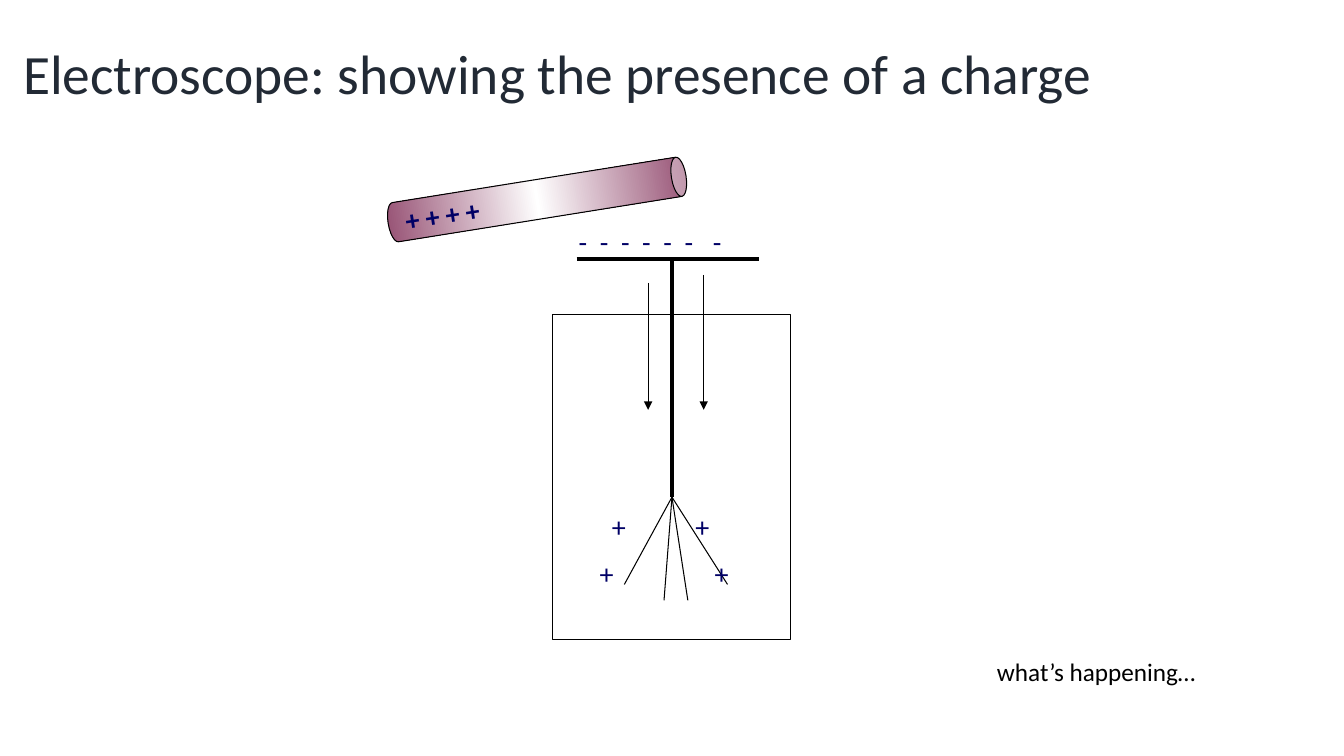
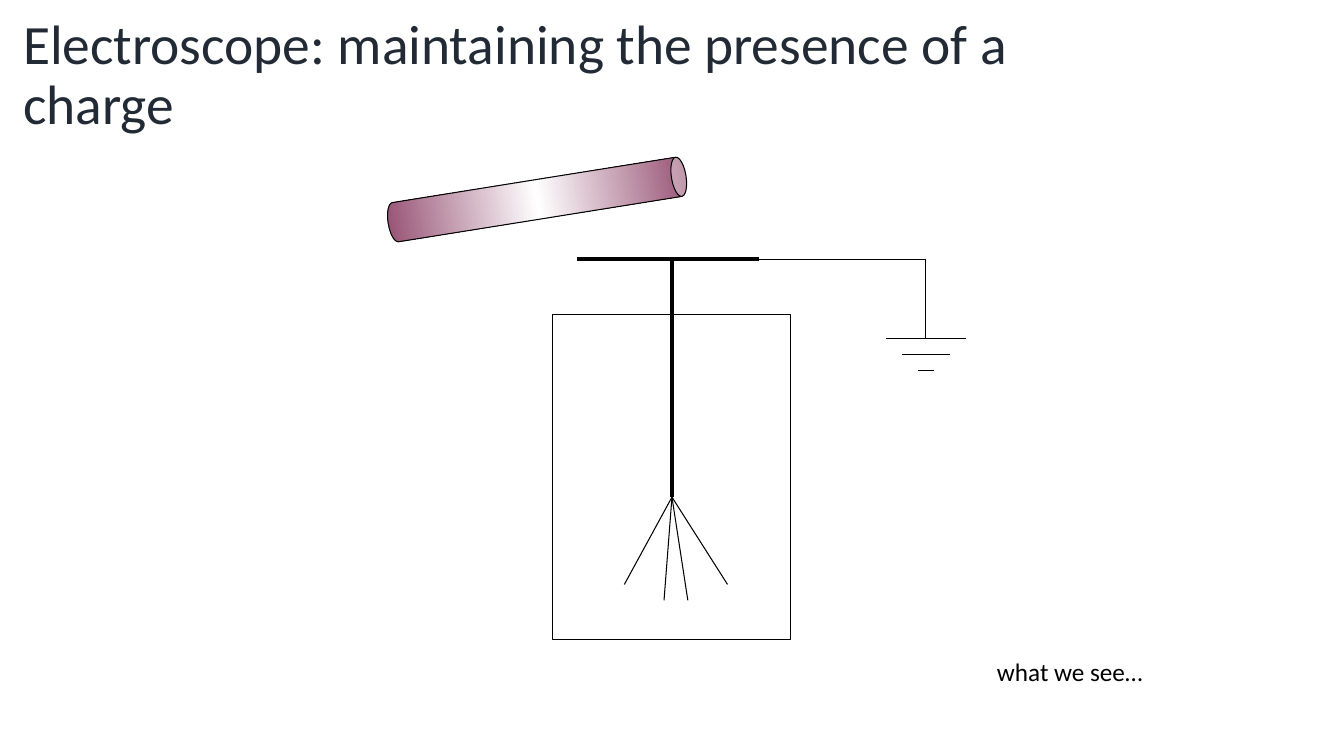
import lxml.etree
import pptx
import pptx.dml.color
import pptx.enum.shapes
import pptx.enum.text
import pptx.oxml.ns
import pptx.util

RGB = pptx.dml.color.RGBColor
BLACK = RGB(0x00, 0x00, 0x00)
WHITE = RGB(0xFF, 0xFF, 0xFF)
CHARGE_BLUE = RGB(0x00, 0x00, 0x66)
TITLE_SLATE = RGB(0x22, 0x2A, 0x35)
ROD_PLUM = RGB(0x95, 0x4F, 0x72)

FONT = "Calibri"
SLIDE_WIDTH = pptx.util.Inches(13.333)
SLIDE_HEIGHT = pptx.util.Inches(7.5)

# Drawing grid: square cells, counted from the middle of the electroscope's plate
CELL = pptx.util.Mm(2)
PLATE_X = SLIDE_WIDTH // 2
PLATE_Y = pptx.util.Inches(2.57)
JOINT = (0, 30)
LEAF_TIPS = [(-6, 11), (-1, 13), (2, 13), (7, 11)]
GROUND = (32, 10)

THIN, STEM, PLATE = 0.75, 2.25, 3


def span_of(cells):
    return round(cells * CELL)


def point(column, row):
    return PLATE_X + span_of(column), PLATE_Y + span_of(row)


def frame(column, row, columns, rows):
    return *point(column, row), span_of(columns), span_of(rows)


def add_child(parent, tag, **attributes):
    child = lxml.etree.SubElement(parent, pptx.oxml.ns.qn(tag))
    for name, value in attributes.items():
        child.set(name, str(value))
    return child


def add_line(page, start, end, width=THIN, arrow=False):
    line = page.shapes.add_connector(
        pptx.enum.shapes.MSO_CONNECTOR.STRAIGHT, *point(*start), *point(*end))
    line.line.color.rgb = BLACK
    line.line.width = pptx.util.Pt(width)
    if arrow:
        add_child(line.line._get_or_add_ln(), "a:tailEnd", type="triangle")
    add_child(line._element.spPr, "a:effectLst")
    return line


def add_outlined(page, kind, place):
    shape = page.shapes.add_shape(kind, *place)
    shape.shadow.inherit = False
    shape.line.color.rgb = BLACK
    shape.line.width = pptx.util.Pt(THIN)
    return shape


def write_span(para, text, size, color, bold=False):
    span = para.add_run()
    span.text = text
    span.font.name = FONT
    span.font.size = pptx.util.Pt(size)
    span.font.color.rgb = color
    span.font.bold = bold


def add_text(page, place, lines, size, color):
    box = page.shapes.add_textbox(*place)
    box.text_frame.word_wrap = True
    for index, text in enumerate(lines):
        para = box.text_frame.paragraphs[0] if index == 0 else box.text_frame.add_paragraph()
        if index:
            para.space_before = pptx.util.Pt(size / 2)
        write_span(para, text, size, color)
    return box


def set_tabs(para, stops):
    tabs = add_child(para._p.get_or_add_pPr(), "a:tabLst")
    for stop in stops:
        add_child(tabs, "a:tab", pos=pptx.util.Inches(stop), algn="l")


def add_title(page, text):
    box = add_text(page, frame(-83, -30.9, 145, 15.9), [text], 39.6, TITLE_SLATE)
    box.text_frame.vertical_anchor = pptx.enum.text.MSO_ANCHOR.MIDDLE
    box.text_frame.paragraphs[0].line_spacing = 0.9


def add_caption(page, text):
    add_text(page, frame(39.7, 49.4, 38.9, 5.1), [text], 18, BLACK)


def add_rod(page):
    rod = add_outlined(page, pptx.enum.shapes.MSO_SHAPE.CAN, frame(-19.5, -26.5, 5, 38))
    rod.adjustments[0] = 0.37
    rod.rotation = 80.9
    # Three-stop gradient along the rod
    rod.fill.gradient()
    gradient = rod._element.spPr.find(pptx.oxml.ns.qn("a:gradFill"))
    for child in list(gradient):
        gradient.remove(child)
    gradient.set("rotWithShape", "1")
    stops = add_child(gradient, "a:gsLst")
    for percent, color in [(0, ROD_PLUM), (50, WHITE), (100, ROD_PLUM)]:
        stop = add_child(stops, "a:gs", pos=percent * 1000)
        add_child(stop, "a:srgbClr", val=color)
    add_child(gradient, "a:lin", ang=90 * 60000, scaled=1)
    return rod


def add_electroscope(page):
    # Case and stem
    case = add_outlined(page, pptx.enum.shapes.MSO_SHAPE.RECTANGLE, frame(-15, 7, 30, 41))
    case.fill.solid()
    case.fill.fore_color.rgb = WHITE
    add_line(page, (0, 0), (0, 8), STEM)
    add_line(page, (0, 7), JOINT, STEM).begin_connect(case, 0)
    # Leaves and plate
    for across, down in LEAF_TIPS:
        add_line(page, JOINT, (JOINT[0] + across, JOINT[1] + down))
    add_line(page, (-12, 0), (11, 0), PLATE)
    return add_rod(page)


def add_charges(page, rod):
    # Positive charges on the rod, reading along its length
    rod.text_frame.word_wrap = False
    rod.text_frame.vertical_anchor = pptx.enum.text.MSO_ANCHOR.MIDDLE
    body = rod.text_frame._txBody.bodyPr
    body.set("vert", "eaVert")
    body.set("rot", str(180 * 60000))
    para = rod.text_frame.paragraphs[0]
    para.alignment = pptx.enum.text.PP_ALIGN.RIGHT
    write_span(para, "+ + + +", 20, CHARGE_BLUE, bold=True)

    # Negative charges on the plate
    box = add_text(page, frame(-13, -5, 25, 5.5), ["\t".join("-" * 7)], 20, CHARGE_BLUE)
    set_tabs(box.text_frame.paragraphs[0], [0.21 * step for step in range(1, 6)] + [1.33])

    # Positive charges beside the leaves
    box = add_text(page, frame(-12, 30.9, 25, 11.8), ["\t+\t+"] * 2, 20, CHARGE_BLUE)
    for para, stops in zip(box.text_frame.paragraphs, [(0.25, 1.08), (0.13, 1.27)]):
        set_tabs(para, stops)

    # Flow down the stem
    for column, top in [(-3, 3), (4, 2)]:
        add_line(page, (column, top), (column, 19), arrow=True)


def add_ground(page):
    column, row = GROUND
    add_line(page, (11, 0), (column, 0))
    add_line(page, (column, 0), GROUND)
    for index, half in enumerate([5, 3, 1]):
        level = row + 2 * index
        add_line(page, (column - half, level), (column + half, level))


def main():
    deck = pptx.Presentation()
    deck.slide_width, deck.slide_height = SLIDE_WIDTH, SLIDE_HEIGHT
    blank = deck.slide_layouts[6]

    # Showing a charge
    page = deck.slides.add_slide(blank)
    rod = add_electroscope(page)
    add_charges(page, rod)
    add_caption(page, "what’s happening…")
    add_title(page, "Electroscope: showing the presence of a charge")

    # Maintaining a charge
    page = deck.slides.add_slide(blank)
    add_electroscope(page)
    add_ground(page)
    add_caption(page, "what we see…")
    add_title(page, "Electroscope: maintaining the presence of a charge")

    deck.save("out.pptx")


if __name__ == "__main__":
    main()
